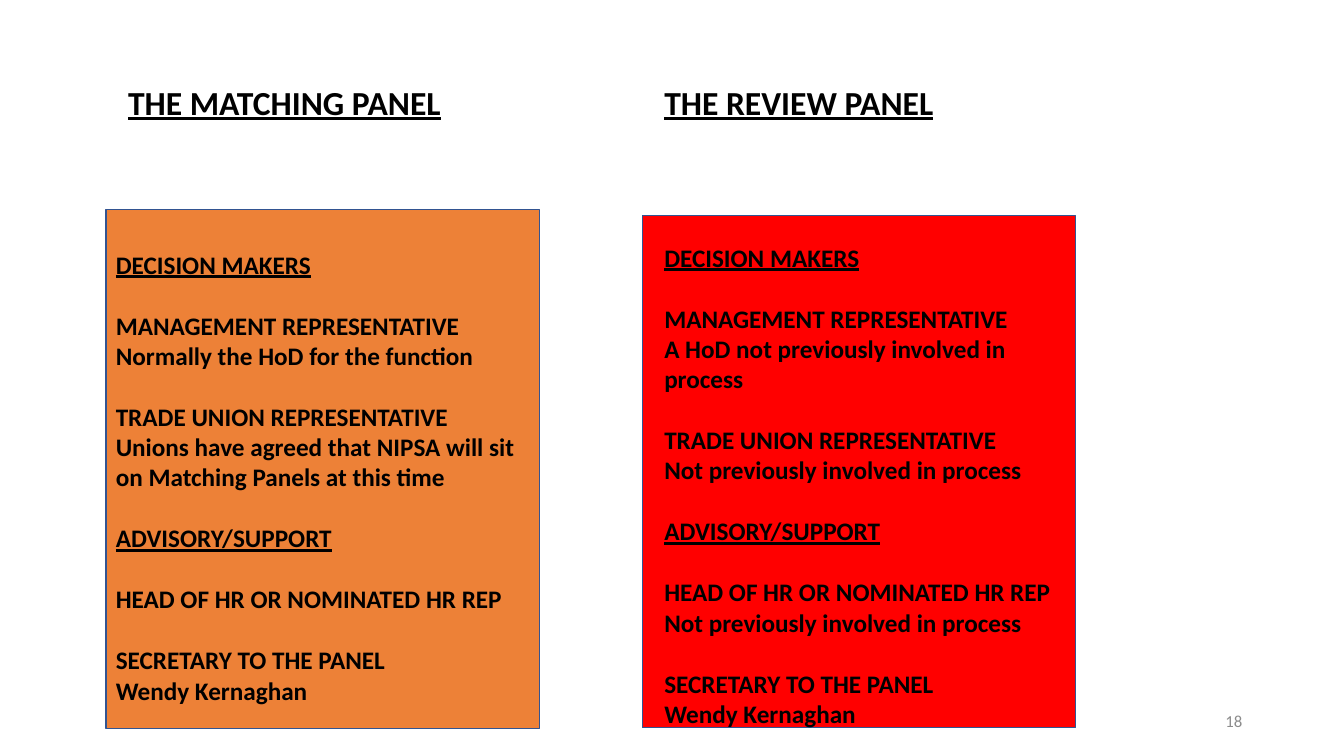
from pptx import Presentation
from pptx.dml.color import RGBColor
from pptx.enum.shapes import MSO_SHAPE
from pptx.enum.text import MSO_ANCHOR, MSO_AUTO_SIZE, PP_ALIGN
from pptx.util import Inches, Pt

RECT = MSO_SHAPE.RECTANGLE
TOP, MIDDLE = MSO_ANCHOR.TOP, MSO_ANCHOR.MIDDLE
LEFT, RIGHT = PP_ALIGN.LEFT, PP_ALIGN.RIGHT
NO_FIT = MSO_AUTO_SIZE.NONE

W, H = 13.33, 7.5
FONT, BLACK, GREY, OUTLINE = "Calibri", "000000", "8C8C8C", "325491"
BODY_SIZE, BLANK_LINE = 18, 22
HEADING_TOP, HEADING_H = 0.76, 0.5
CARD_W = 4.3
UNDERLINED = ("DECISION MAKERS", "ADVISORY/SUPPORT")

PANELS = [
    {
        "heading": "THE MATCHING PANEL", "heading_at": (1.17, 3.48),
        "fill": "ED8137", "card": (1.05, 2.08, CARD_W, 5.15),
        "body": (1.05, 2.42, 4.48, 4.64),
        "groups": [
            ["DECISION MAKERS"],
            ["MANAGEMENT REPRESENTATIVE Normally the HoD for the function"],
            ["TRADE UNION REPRESENTATIVE",
             "Unions have agreed that NIPSA will sit",
             "on Matching Panels at this time"],
            ["ADVISORY/SUPPORT"],
            ["HEAD OF HR OR NOMINATED HR REP"],
            ["SECRETARY TO THE PANEL", "Wendy Kernaghan"],
        ],
    },
    {
        "heading": "THE REVIEW PANEL", "heading_at": (6.49, 4.04),
        "fill": "FF0000", "card": (6.37, 2.14, CARD_W, 5.08),
        "body": (6.49, 2.35, 4.04, 4.95),
        "groups": [
            ["DECISION MAKERS"],
            ["MANAGEMENT REPRESENTATIVE",
             "A HoD not previously involved in process"],
            ["TRADE UNION REPRESENTATIVE", "Not previously involved in process"],
            ["ADVISORY/SUPPORT"],
            ["HEAD OF HR OR NOMINATED HR REP",
             "Not previously involved in process"],
            ["SECRETARY TO THE PANEL", "Wendy Kernaghan"],
        ],
    },
]


def rgb(value):
    return RGBColor.from_string(value)


def place(sp, box):
    sp.left, sp.top, sp.width, sp.height = [Inches(v) for v in box]


def write(sp, groups, size, color=BLACK, bold=True, underlined=(),
          align=LEFT, anchor=TOP):
    tf = sp.text_frame
    tf.word_wrap = True
    tf.auto_size = NO_FIT
    tf.vertical_anchor = anchor
    tf.text = "\n".join(line for group in groups for line in group)
    starts = [i == 0 for group in groups for i in range(len(group))]
    for i, (p, start) in enumerate(zip(tf.paragraphs, starts)):
        p.alignment = align
        p.space_before = Pt(BLANK_LINE if start and i else 0)
        for r in p.runs:
            r.font.name, r.font.size = FONT, Pt(size)
            r.font.bold, r.font.underline = bold, r.text in underlined
            r.font.color.rgb = rgb(color)


def text_box(s, box):
    return s.shapes.add_textbox(*[Inches(v) for v in box])


def add_card(s, box, fill):
    sp = s.shapes.add_shape(RECT, *[Inches(v) for v in box])
    sp.shadow.inherit = False
    sp.fill.solid()
    sp.fill.fore_color.rgb = rgb(fill)
    sp.line.color.rgb = rgb(OUTLINE)
    sp.line.width = Pt(1)


def main():
    prs = Presentation()
    prs.slide_width, prs.slide_height = Inches(W), Inches(H)
    s = prs.slides.add_slide(prs.slide_layouts[5])

    for i, panel in enumerate(PANELS):
        x, width = panel["heading_at"]
        box = (x, HEADING_TOP, width, HEADING_H)
        heading = text_box(s, box) if i else s.shapes.title
        place(heading, box)
        write(heading, [[panel["heading"]]], 24, underlined=[panel["heading"]])
        add_card(s, panel["card"], panel["fill"])
        write(text_box(s, panel["body"]), panel["groups"], BODY_SIZE,
              underlined=UNDERLINED)

    number = text_box(s, (9.42, 6.95, 3, 0.4))
    write(number, [["18"]], 12, GREY, bold=False, align=RIGHT, anchor=MIDDLE)
    prs.save("out.pptx")


if __name__ == "__main__":
    main()
